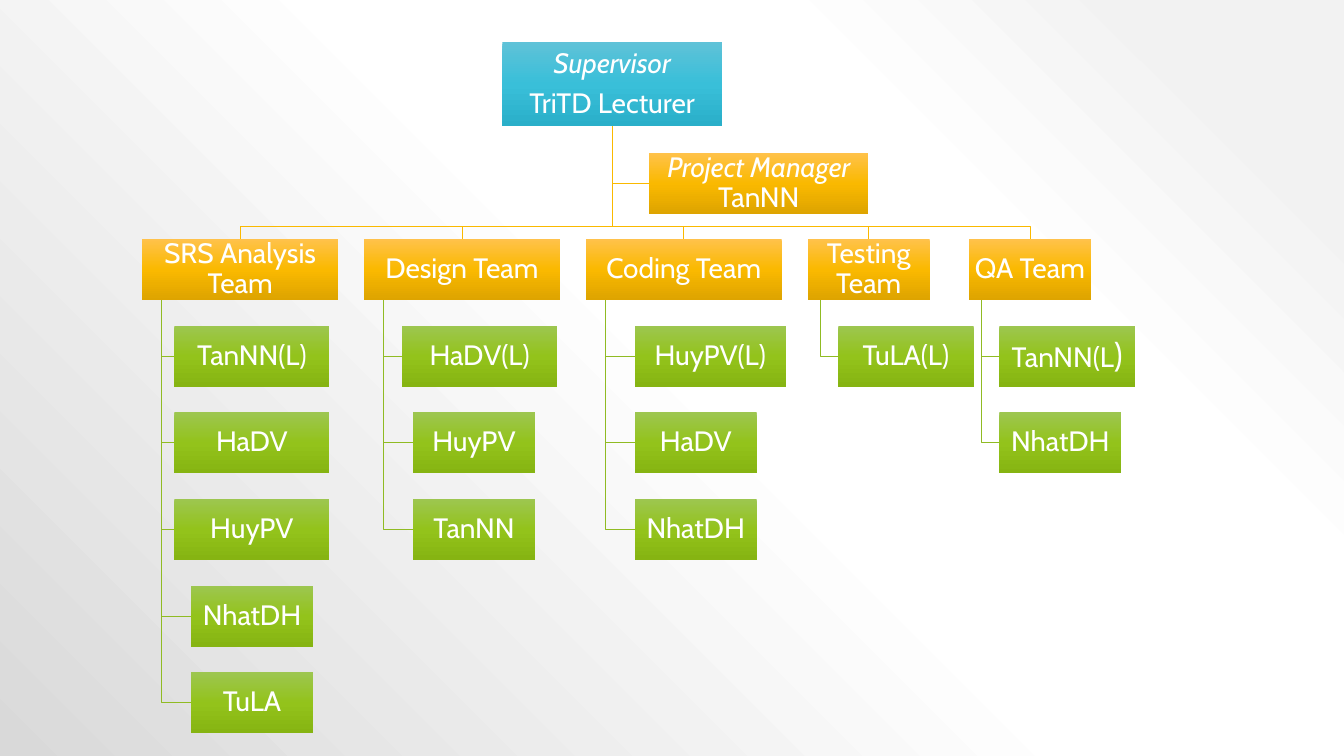
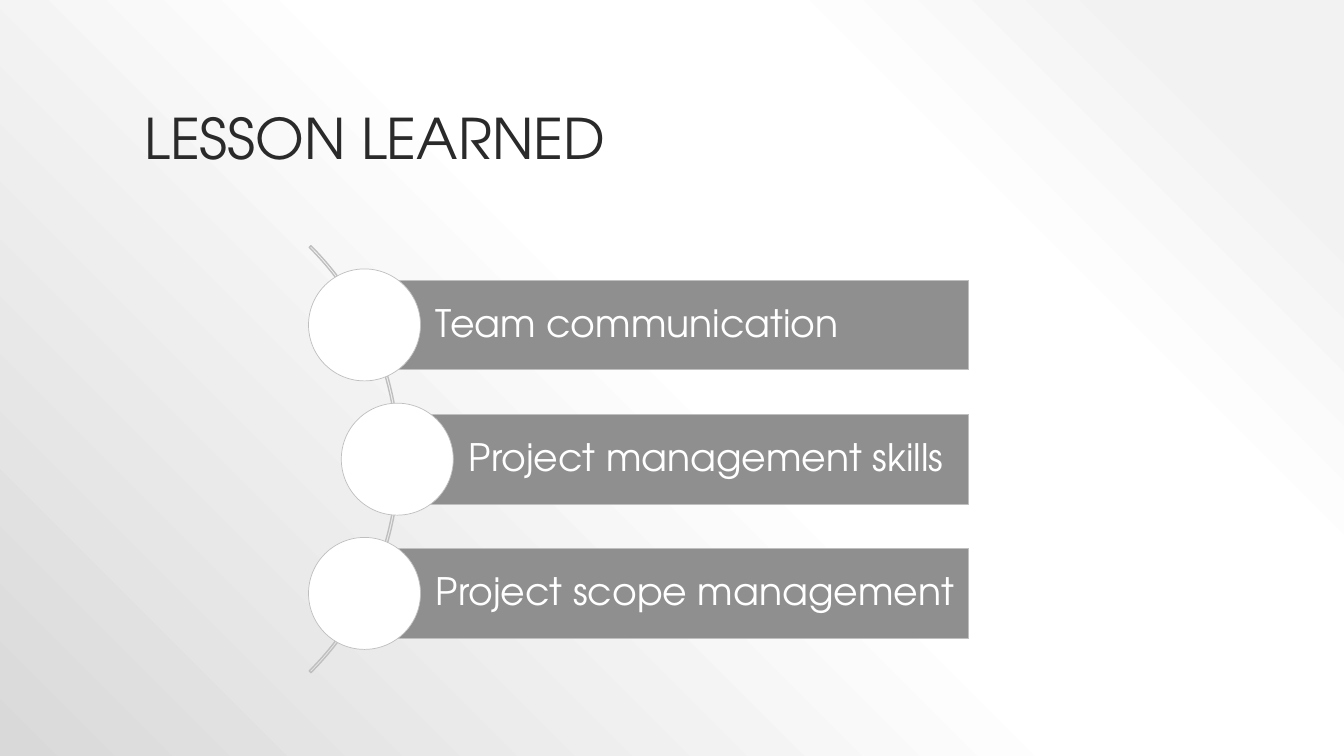
from pptx import Presentation
from pptx.dml.color import RGBColor
from pptx.enum import shapes, text
from pptx.oxml import parse_xml
from pptx.oxml.ns import nsdecls, qn
from pptx.util import Pt

HEX = {"white": "FFFFFF", "ink": "2A2A2A", "bar": "8F8F8F", "rim": "BFBFBF",
       "gold": "FAB900", "green": "90BB23"}
FADES = {
    "back": [(10, "F2F2F2"), (28, "FFFFFF"), (48, "FFFFFF"), (100, "D9D9D9")],
    "blue": [(0, "5FC2D8"), (50, "39BFD9"), (100, "2AAFC9")],
    "gold": [(0, "FFC24B"), (50, "FAB900"), (100, "DEA400")],
    "green": [(0, "9DC650"), (50, "93C31B"), (100, "86B412")],
}
DOWN = '<a:lin ang="5400000" scaled="0"/>'
CORNER = '<a:path path="circle"><a:fillToRect l="100000" b="100000"/></a:path>'
BODY, HEAD = "Cabin", "TeX Gyre Adventor"

# Paragraphs are lists of runs: (text, size, italic)
BOSS = [[("Supervisor", 20, True)], [("TriTD Lecturer", 20, False)]]
LEAD = [[("Project Manager ", 20, True), ("TanNN", 20, False)]]
# Team: name, left, width, members; member: name, offset from team left, width
TEAMS = [
    ("SRS Analysis Team", 101.5, 140,
     [("TanNN(L)", 23, 110.9), ("HaDV", 23, 110.9), ("HuyPV", 23, 110.9),
      ("NhatDH", 35, 87.1), ("TuLA", 35, 87.1)]),
    ("Design Team", 260, 140,
     [("HaDV(L)", 27.2, 110.7), ("HuyPV", 35, 87.1), ("TanNN", 35, 87.1)]),
    ("Coding Team", 418.4, 140,
     [("HuyPV(L)", 35, 108), ("HaDV", 35, 87.1), ("NhatDH", 35, 87.1)]),
    ("Testing Team", 577, 87.1, [("TuLA(L)", 21.8, 96.7)]),
    ("QA Team", 692.1, 87.1,
     [([[("TanNN(L", 20, False), (")", 24, False)]], 21.8, 96.7),
      ("NhatDH", 21.8, 87.1)]),
]
LESSONS = [("Team communication", 260.4), ("Project management skills", 283.8),
           ("Project scope management", 260.4)]


def paint(fill, root, name, kind):
    """Fill the shape or background held in root with a named gradient."""
    fill.gradient()
    old = next(root.iter(qn("a:gradFill")))
    stops = "".join(f'<a:gs pos="{at * 1000}"><a:srgbClr val="{c}"/></a:gs>'
                    for at, c in FADES[name])
    old.getparent().replace(old, parse_xml(
        f'<a:gradFill {nsdecls("a")} rotWithShape="1">'
        f"<a:gsLst>{stops}</a:gsLst>{kind}</a:gradFill>"))


def write(shape, paras, font, color, align, pads):
    frame = shape.text_frame
    frame.word_wrap = True
    frame.vertical_anchor = text.MSO_ANCHOR.MIDDLE
    (frame.margin_left, frame.margin_top,
     frame.margin_right, frame.margin_bottom) = map(Pt, pads)
    for i, runs in enumerate(paras):
        para = frame.add_paragraph() if i else frame.paragraphs[0]
        para.alignment = align
        para.line_spacing = 0.9
        para.space_before = Pt(7 if i else 0)
        for words, size, slant in runs:
            run = para.add_run()
            run.text = words
            run.font.name, run.font.size = font, Pt(size)
            run.font.italic = slant
            run.font.color.rgb = RGBColor.from_string(HEX[color])


def style(shape, fill=None, edge=0, color="rim"):
    shape.shadow.inherit = False
    if fill:
        shape.fill.solid()
        shape.fill.fore_color.rgb = RGBColor.from_string(HEX[fill])
    else:
        shape.fill.background()
    if edge:
        shape.line.color.rgb = RGBColor.from_string(HEX[color])
        shape.line.width = Pt(edge)
    else:
        shape.line.fill.background()


def draw(slide, kind, x, y, w, h, fill=None, edge=0):
    shape = slide.shapes.add_shape(kind, Pt(x), Pt(y), Pt(w), Pt(h))
    style(shape, fill, edge)
    return shape


def box(slide, words, x, y, w, h, fade):
    shape = draw(slide, shapes.MSO_SHAPE.RECTANGLE, x, y, w, h)
    paint(shape.fill, shape._element, fade, DOWN)
    paras = [[(words, 20, False)]] if isinstance(words, str) else words
    write(shape, paras, BODY, "white", text.PP_ALIGN.CENTER, [0.9] * 4)


def link(slide, color, *points):
    """Draw one open, bent line through the points."""
    first, *rest = [(Pt(x), Pt(y)) for x, y in points]
    pen = slide.shapes.build_freeform(*first)
    pen.add_line_segments(rest, close=False)
    style(pen.convert_to_shape(), edge=0.5, color=color)


def chart(slide):
    """Draw the organisation tree, links first so that boxes cover them."""
    mid, foot, bus, top, high, step = 437.3, 90, 161.5, 170.7, 43.5, 61.9
    wide, lead_x, lead_y = 156.8, 463.6, 109.2
    side = lead_y + high / 2
    boxes = [(BOSS, mid - wide / 2, 30, wide, 60, "blue"),
             (LEAD, lead_x, lead_y, wide, high, "gold")]
    link(slide, "gold", (mid, foot), (mid, side), (lead_x, side))
    for name, x, w, crew in TEAMS:
        hub, spine = x + w / 2, x + w / 10
        link(slide, "gold", (mid, foot), (mid, bus), (hub, bus), (hub, top))
        boxes.append((name, x, top, w, high, "gold"))
        for row, (who, shift, width) in enumerate(crew, 1):
            left, y = x + shift, top + row * step
            level = y + high / 2
            link(slide, "green", (spine, top + high), (spine, level),
                 (left, level))
            boxes.append((who, left, y, width, high, "green"))
    for item in boxes:
        box(slide, *item)


def lessons(slide):
    title = slide.shapes.title
    title.left, title.top, title.width, title.height = map(
        Pt, (95.8, 21.6, 768, 104.4))
    write(title, [[("LESSON LEARNED", 40, False)]], HEAD, "ink",
          text.PP_ALIGN.LEFT, (7.2, 3.6, 7.2, 3.6))
    title.text_frame.vertical_anchor = text.MSO_ANCHOR.BOTTOM

    mid, step, high, right, disc, ring = 328, 95.9, 64.2, 692, 80, 431.3
    arc = draw(slide, shapes.MSO_SHAPE.BLOCK_ARC, -146, mid - ring / 2,
               ring, ring, edge=1)
    for i, turn in enumerate((189, 27, 0.004)):
        arc.adjustments[i] = turn
    for i, (words, x) in enumerate(LESSONS):
        y = mid + (i - 1) * step
        bar = draw(slide, shapes.MSO_SHAPE.RECTANGLE, x, y - high / 2,
                   right - x, high, "bar", 0.75)
        write(bar, [[(words, 27, False)]], HEAD, "white",
              text.PP_ALIGN.LEFT, (51, 5, 5, 5))
        draw(slide, shapes.MSO_SHAPE.OVAL, x - disc / 2, y - disc / 2,
             disc, disc, "white", 0.5)


def main():
    deck = Presentation()
    deck.slide_width, deck.slide_height = Pt(960), Pt(540)
    master = deck.slide_master
    paint(master.background.fill, master._element, "back", CORNER)
    chart(deck.slides.add_slide(deck.slide_layouts[6]))
    lessons(deck.slides.add_slide(deck.slide_layouts[5]))
    deck.save("out.pptx")


if __name__ == "__main__":
    main()
